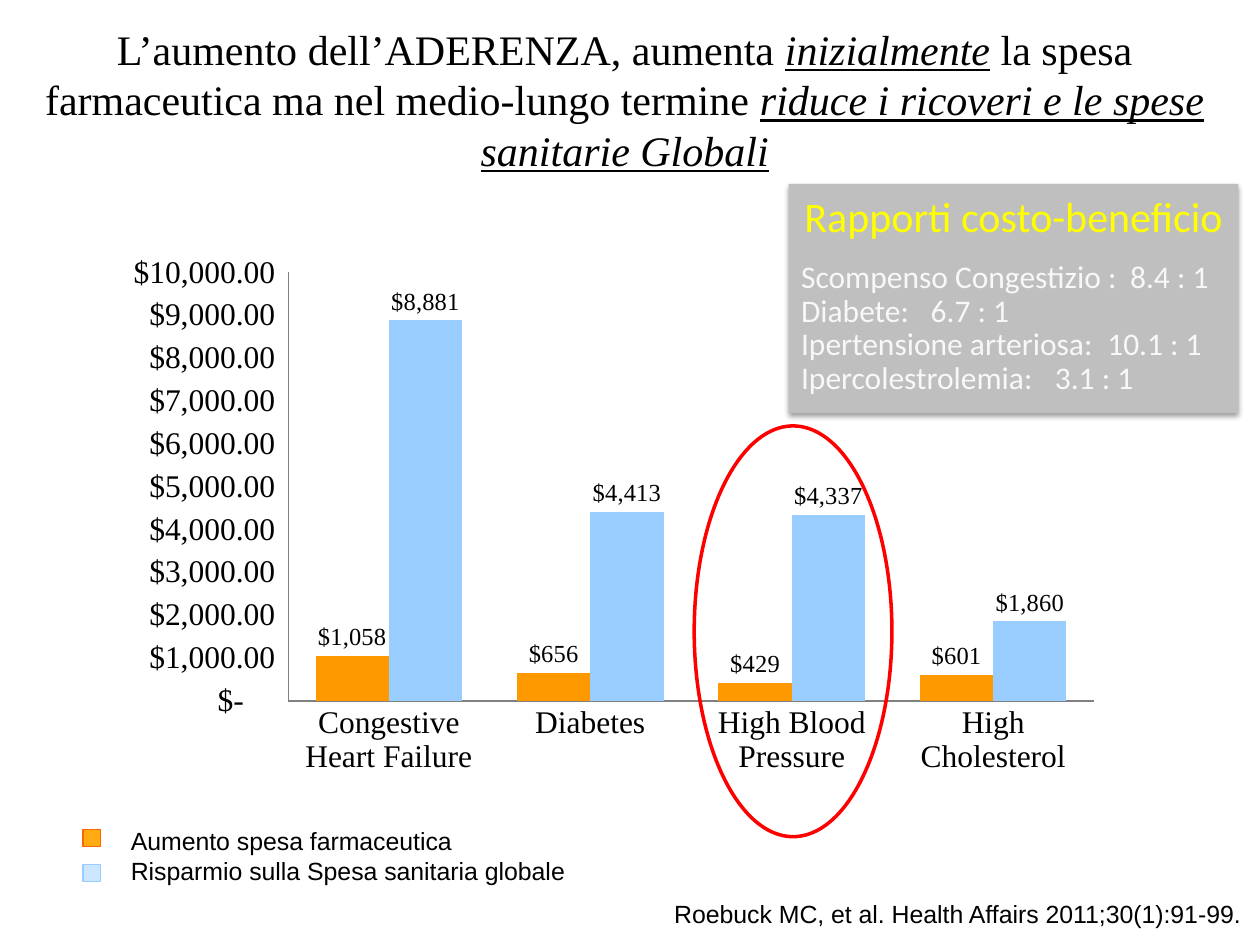
from lxml import etree
from pptx import Presentation
from pptx.chart.data import CategoryChartData
from pptx.dml.color import RGBColor
from pptx.enum.chart import XL_CHART_TYPE, XL_LABEL_POSITION, XL_TICK_MARK
from pptx.enum.shapes import MSO_SHAPE
from pptx.enum.text import MSO_ANCHOR, PP_ALIGN
from pptx.oxml import parse_xml
from pptx.oxml.ns import nsdecls, qn
from pptx.util import Pt

COLUMNS = XL_CHART_TYPE.COLUMN_CLUSTERED
OUTSIDE = XL_LABEL_POSITION.OUTSIDE_END
NO_TICK = XL_TICK_MARK.NONE
RECTANGLE, OVAL = MSO_SHAPE.RECTANGLE, MSO_SHAPE.OVAL
TOP = MSO_ANCHOR.TOP
LEFT, CENTER, RIGHT = PP_ALIGN.LEFT, PP_ALIGN.CENTER, PP_ALIGN.RIGHT

COLORS = {
    "text": "000000", "axis": "808080", "cost": "FF9900", "saving": "99CCFF",
    "cost_key": "FFAC13", "cost_edge": "FF6600", "saving_key": "CCE6FF",
    "panel": "BFBFBF", "heading": "FFFF00", "ratio": "F8F8F8", "ring": "FF0000",
}
SERIF, SANS, PANEL_FONT = "Times New Roman", "Arial", "Calibri"
AXIS_FORMAT = '_("$"* #,##0.00_);_("$"* \\(#,##0.00\\);_("$"* "-"??_);_(@_)'
LABEL_FORMAT = '"$"#,##0'


def color(name):
    return RGBColor.from_string(COLORS[name])


class SlideBuilder:
    def __init__(self, slide):
        self.slide = slide

    def style(self, font, name, size, color_name):
        font.name, font.size = name, Pt(size)
        font.color.rgb = color(color_name)

    def paragraph(self, paragraph, runs, font, size, color_name, align, spacing=None):
        """Fill a paragraph with (text, emphasised) runs."""
        paragraph.alignment = align
        if spacing:
            paragraph.line_spacing = Pt(spacing)
        for text, emphasised in runs:
            run = paragraph.add_run()
            run.text = text
            self.style(run.font, font, size, color_name)
            if emphasised:
                run.font.italic = run.font.underline = True

    def text(self, box, paragraphs, font, size, align, spacing, wrap=True):
        shape = self.slide.shapes.add_textbox(*map(Pt, box))
        frame = shape.text_frame
        frame.word_wrap = wrap
        for index, runs in enumerate(paragraphs):
            paragraph = frame.add_paragraph() if index else frame.paragraphs[0]
            self.paragraph(paragraph, runs, font, size, "text", align, spacing)
        return frame

    def shape(self, kind, box, fill=None, line=None, width=0.75):
        shape = self.slide.shapes.add_shape(kind, *map(Pt, box))
        shape.shadow.inherit = False
        if fill:
            shape.fill.solid()
            shape.fill.fore_color.rgb = color(fill)
        else:
            shape.fill.background()
        if line:
            shape.line.color.rgb = color(line)
            shape.line.width = Pt(width)
        else:
            shape.line.fill.background()
        return shape

    def panel(self, box, heading, ratios):
        """Shaded box; each ratio is (label, value, tab stop)."""
        shape = self.shape(RECTANGLE, box, "panel")
        effects = shape._element.spPr.find(qn("a:effectLst"))
        effects.append(parse_xml(
            f'<a:outerShdw {nsdecls("a")} blurRad="{Pt(3.1)}" dist="{Pt(1.6)}" '
            'dir="5400000" rotWithShape="0"><a:srgbClr val="000000">'
            '<a:alpha val="38000"/></a:srgbClr></a:outerShdw>'))
        frame = shape.text_frame
        frame.word_wrap = True
        frame.vertical_anchor = TOP
        self.paragraph(frame.paragraphs[0], [(heading, False)],
                       PANEL_FONT, 24, "heading", CENTER)
        for index, (label, value, stop) in enumerate(ratios):
            paragraph = frame.add_paragraph()
            self.paragraph(paragraph, [(f"{label}\t{value}", False)],
                           PANEL_FONT, 18, "ratio", LEFT, 19.2)
            if index == 0:
                paragraph.space_before = Pt(12)
            tabs = etree.SubElement(paragraph._p.get_or_add_pPr(), qn("a:tabLst"))
            etree.SubElement(tabs, qn("a:tab"), pos=str(Pt(stop)), algn="l")

    def chart(self, box, categories, series, layout):
        data = CategoryChartData(number_format=AXIS_FORMAT)
        data.categories = categories
        for name, values, _ in series:
            data.add_series(name, values)
        chart = self.slide.shapes.add_chart(COLUMNS, *map(Pt, box), data).chart
        chart.has_legend = chart.has_title = False
        self.style(chart.font, SERIF, 18, "text")

        # Axes
        value_axis = chart.value_axis
        value_axis.minimum_scale, value_axis.maximum_scale = 0, 10000
        value_axis.major_unit = 1000
        value_axis.has_major_gridlines = False
        value_axis.tick_labels.number_format = AXIS_FORMAT
        value_axis.tick_labels.number_format_is_linked = False
        for axis in (value_axis, chart.category_axis):
            axis.major_tick_mark = axis.minor_tick_mark = NO_TICK
            axis.format.line.color.rgb = color("axis")
            axis.format.line.width = Pt(0.75)

        # Columns and their labels
        plot = chart.plots[0]
        plot.gap_width, plot.overlap = 75, 0
        plot.vary_by_categories = False
        for columns, (_, _, fill) in zip(plot.series, series):
            columns.format.fill.solid()
            columns.format.fill.fore_color.rgb = color(fill)
            labels = columns.data_labels
            labels.show_value = True
            labels.position = OUTSIDE
            labels.number_format = LABEL_FORMAT
            labels.number_format_is_linked = False
            self.style(labels.font, SERIF, 14, "text")

        # Fixed inner plot area
        plot_area = chart._chartSpace.chart.plotArea
        for old in plot_area.findall(qn("c:layout")):
            plot_area.remove(old)
        modes = '<c:xMode val="edge"/><c:yMode val="edge"/>'
        sizes = "".join(f'<c:{key} val="{value}"/>' for key, value in zip("xywh", layout))
        plot_area.insert(0, parse_xml(
            f'<c:layout {nsdecls("c")}><c:manualLayout><c:layoutTarget val="inner"/>'
            f'{modes}{sizes}</c:manualLayout></c:layout>'))


def main():
    presentation = Presentation()
    presentation.slide_width, presentation.slide_height = Pt(720), Pt(540)
    builder = SlideBuilder(presentation.slides.add_slide(presentation.slide_layouts[6]))

    # Source reference
    source = builder.text(
        (130, 509.8, 590, 21), [[("Roebuck MC, et al. Health Affairs 2011;30(1):91-99.", False)]],
        SANS, 14.2, RIGHT, 17.2)
    source.margin_bottom, source.margin_right = 0, Pt(11)

    # Title
    builder.text((-3, 9.4, 720, 94.3), [[
        ("L’aumento dell’ADERENZA, aumenta ", False),
        ("inizialmente", True),
        (" la spesa farmaceutica ma nel medio-lungo termine ", False),
        ("riduce i ricoveri e le spese sanitarie Globali", True),
    ]], SERIF, 24, CENTER, 29)

    # Cost and saving per condition
    builder.chart(
        (36.7, 141.8, 589.7, 316.8),
        ["Congestive Heart Failure", "Diabetes", "High Blood Pressure", "High Cholesterol"],
        [("Series 1", (1058, 656, 429, 601), "cost"),
         ("Series 2", (8881, 4413, 4337, 1860), "saving")],
        (0.217, 0.044, 0.781, 0.773))

    # Cost-benefit ratios
    builder.panel((450.7, 105.1, 257, 131), "Rapporti costo-beneficio", [
        ("Scompenso Congestizio :", "8.4 : 1", 188),
        ("Diabete:", "6.7 : 1", 74),
        ("Ipertensione arteriosa:", "10.1 : 1", 175),
        ("Ipercolestrolemia:", "3.1 : 1", 145),
    ])

    # Legend
    builder.text((67.7, 468, 265.7, 41.8), [
        [("Aumento spesa farmaceutica", False)],
        [("Risparmio sulla Spesa sanitaria globale", False)],
    ], SANS, 14.2, LEFT, 17.2, wrap=False)
    for top, fill, line in ((473.8, "cost_key", "cost_edge"), (493.9, "saving_key", "saving")):
        builder.shape(RECTANGLE, (47.5, top, 10, 10), fill, line)

    # Highlighted condition
    builder.shape(OVAL, (396.7, 243.4, 113, 234.7), line="ring", width=2)

    presentation.save("out.pptx")


if __name__ == "__main__":
    main()
